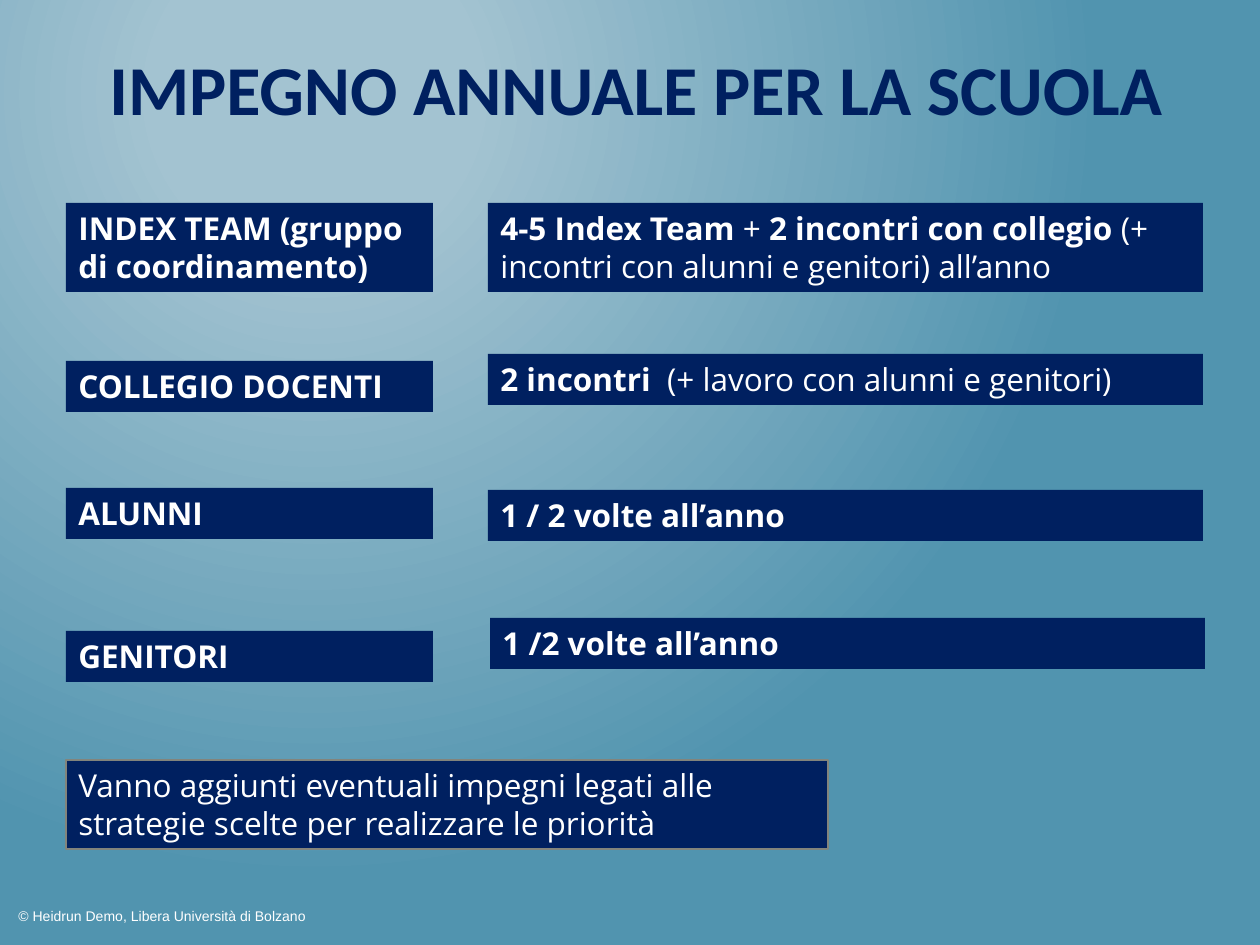
"""Build the slide on the school's yearly commitment."""
from lxml import etree
from pptx import Presentation
from pptx import util as u
from pptx.dml import color
from pptx.enum import shapes, text
from pptx.oxml import ns

SCALE = 914400 / 126
NAVY, WHITE = "002060", "FFFFFF"


def rgb(value):
    return color.RGBColor.from_string(value)


def write(shape, runs, font, size, ink, align=text.PP_ALIGN.LEFT):
    frame = shape.text_frame
    frame.word_wrap = True
    frame.vertical_anchor = text.MSO_ANCHOR.TOP
    paragraph = frame.paragraphs[0]
    paragraph.alignment = align
    paragraph.font.name = font
    paragraph.font.size = u.Pt(size)
    paragraph.font.color.rgb = rgb(ink)
    for words, bold in runs:
        run = paragraph.add_run()
        run.text = words
        run.font.bold = bold


presentation = Presentation()
presentation.slide_width = u.Inches(10)
presentation.slide_height = u.Inches(7.5)
slide = presentation.slides.add_slide(presentation.slide_layouts[6])

background = slide.background.fill
background.gradient()
for stop, (position, shade) in zip(background.gradient_stops, [(0.2, "A3C3D1"), (1, "5194AF")]):
    stop.position = position
    stop.color.rgb = rgb(shade)
gradient = slide.element.find(".//" + ns.qn("a:gradFill"))
gradient.remove(gradient.find(ns.qn("a:lin")))
circle = etree.SubElement(gradient, ns.qn("a:path"), {"path": "circle"})
etree.SubElement(circle, ns.qn("a:fillToRect"), l="50000", t="20000", r="100000", b="100000")

labels = [
    ((6, 901, 328, 30), "© Heidrun Demo, Libera Università di Bolzano", False, "Arial", 8, WHITE, text.PP_ALIGN.LEFT),
    ((69, 39, 1134, 158), "IMPEGNO ANNUALE PER LA SCUOLA", True, "Calibri", 40, NAVY, text.PP_ALIGN.CENTER),
]
for box, words, bold, font, size, ink, align in labels:
    shape = slide.shapes.add_textbox(*[u.Emu(round(px * SCALE)) for px in box])
    write(shape, [(words, bold)], font, size, ink, align)

LEFT, LEFT_WIDTH, RIGHT, RIGHT_WIDTH = 66, 367, 488, 715
ONE_LINE, TWO_LINES = 51, 89
bars = [
    ((LEFT, 203, LEFT_WIDTH, TWO_LINES), [("INDEX TEAM (gruppo di coordinamento)", True)], None),
    ((LEFT, 361, LEFT_WIDTH, ONE_LINE), [("COLLEGIO DOCENTI", True)], None),
    ((LEFT, 488, LEFT_WIDTH, ONE_LINE), [("ALUNNI", True)], None),
    ((LEFT, 631, LEFT_WIDTH, ONE_LINE), [("GENITORI", True)], None),
    ((RIGHT, 203, RIGHT_WIDTH, TWO_LINES), [
        ("4-5 Index Team ", True), ("+ ", False), ("2 incontri con collegio ", True),
        ("(+ incontri con alunni e genitori) all’anno", False)], None),
    ((RIGHT, 354, RIGHT_WIDTH, ONE_LINE), [
        ("2 incontri  ", True), ("(+ lavoro con alunni e genitori)", False)], None),
    ((RIGHT, 490, RIGHT_WIDTH, ONE_LINE), [("1 / 2 volte all’anno", True)], None),
    ((RIGHT + 2, 618, RIGHT_WIDTH, ONE_LINE), [("1 /2 volte all’anno", True)], None),
    ((LEFT, 760, 762, TWO_LINES), [
        ("Vanno aggiunti eventuali impegni legati alle strategie scelte per realizzare le priorità", False)], "82847C"),
]
for box, runs, outline in bars:
    bar = slide.shapes.add_shape(shapes.MSO_SHAPE.RECTANGLE, *[u.Emu(round(px * SCALE)) for px in box])
    bar.shadow.inherit = False
    bar.fill.solid()
    bar.fill.fore_color.rgb = rgb(NAVY)
    if outline:
        bar.line.color.rgb = rgb(outline)
        bar.line.width = u.Pt(0.75)
    else:
        bar.line.fill.background()
    write(bar, runs, "Open Sans", 18, WHITE)

presentation.save("out.pptx")
